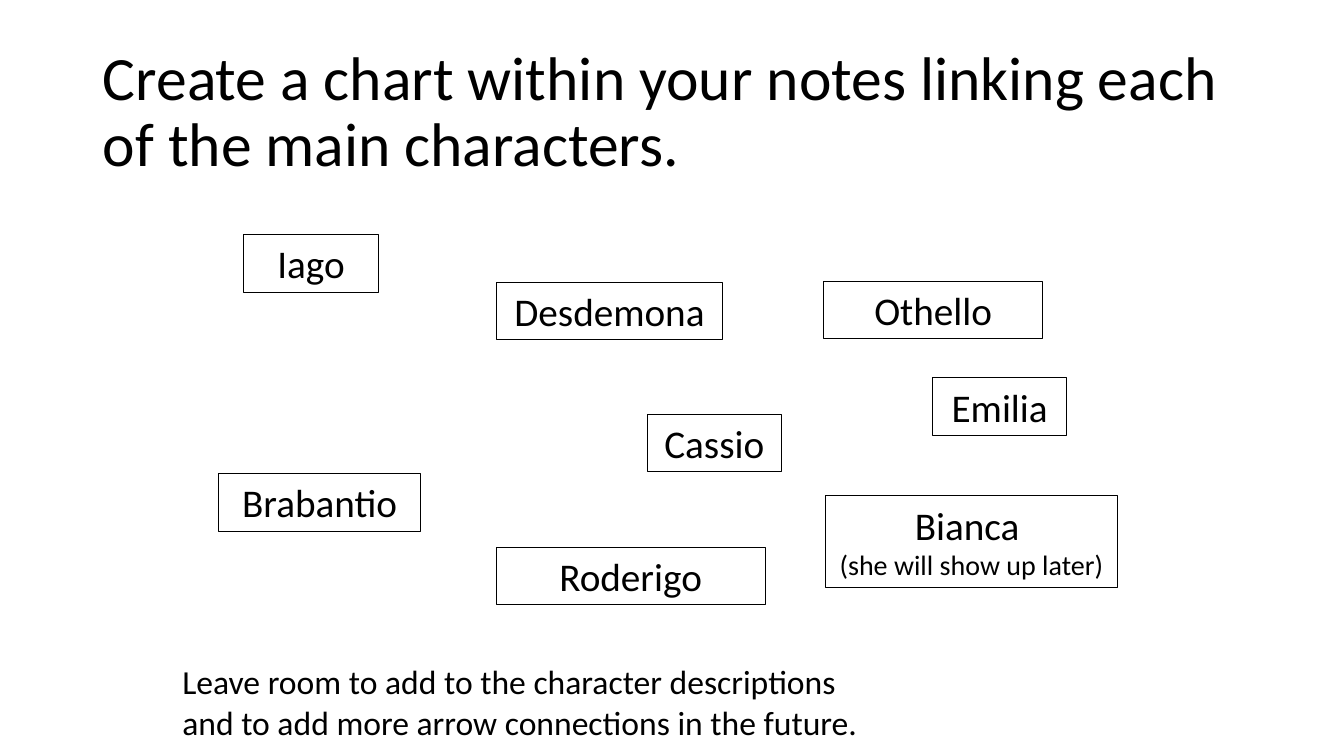
from dataclasses import dataclass

from pptx import Presentation
from pptx.dml.color import RGBColor
from pptx.enum.shapes import MSO_SHAPE
from pptx.enum.text import MSO_ANCHOR, MSO_AUTO_SIZE, PP_ALIGN
from pptx.util import Emu, Pt

RECT = MSO_SHAPE.RECTANGLE
TOP, MIDDLE = MSO_ANCHOR.TOP, MSO_ANCHOR.MIDDLE
LEFT, CENTER = PP_ALIGN.LEFT, PP_ALIGN.CENTER
NO_FIT, GROW = MSO_AUTO_SIZE.NONE, MSO_AUTO_SIZE.SHAPE_TO_FIT_TEXT

EMU_PER_PX = 9144  # 100 px to the inch
FONT = "Calibri"
BLACK = "000000"
TITLE_SIZE, NAME_SIZE, NOTE_SIZE, REMARK_SIZE = 44, 28, 24, 20
NAME_HEIGHT, REMARK_HEIGHT = 57, 91
TITLE_LAYOUT = 5


@dataclass
class Character:
    name: str
    x: int
    y: int
    w: int
    remark: str = ""


CHARACTERS = [
    Character("Iago", 242, 233, 133),
    Character("Cassio", 642, 411, 133),
    Character("Brabantio", 217, 470, 200),
    Character("Desdemona", 492, 280, 225),
    Character("Roderigo", 492, 543, 267),
    Character("Othello", 817, 279, 217),
    Character("Emilia", 925, 375, 133),
    Character("Bianca ", 819, 492, 289, "(she will show up later)"),
]
NOTE_LINES = [
    "Leave room to add to the character descriptions",
    "and to add more arrow connections in the future.",
]


def px(n: int) -> Emu:
    return Emu(n * EMU_PER_PX)


def color(hex_code: str) -> RGBColor:
    return RGBColor.from_string(hex_code)


def write(tf, lines: list[tuple[str, int]], align) -> None:
    """Write one paragraph for each (text, size) pair."""
    for i, (text, size) in enumerate(lines):
        p = tf.add_paragraph() if i else tf.paragraphs[0]
        p.alignment = align
        r = p.add_run()
        r.text = text
        r.font.name = FONT
        r.font.size = Pt(size)
        r.font.color.rgb = color(BLACK)


def add_title(s, text: str) -> None:
    sp = s.shapes.title
    sp.left, sp.top, sp.width, sp.height = px(92), px(40), px(1150), px(145)
    tf = sp.text_frame
    tf.auto_size = NO_FIT
    tf.vertical_anchor = MIDDLE
    write(tf, [(text, TITLE_SIZE)], LEFT)
    tf.paragraphs[0].line_spacing = 0.9


def add_character(s, c: Character) -> None:
    height = REMARK_HEIGHT if c.remark else NAME_HEIGHT
    sp = s.shapes.add_shape(RECT, px(c.x), px(c.y), px(c.w), px(height))
    sp.shadow.inherit = False
    sp.fill.background()
    sp.line.color.rgb = color(BLACK)
    sp.line.width = Pt(0.75)
    tf = sp.text_frame
    tf.word_wrap = True
    tf.auto_size = GROW
    tf.vertical_anchor = TOP
    lines = [(c.name, NAME_SIZE)]
    if c.remark:
        lines.append((c.remark, REMARK_SIZE))
    write(tf, lines, CENTER)


def add_note(s, lines: list[str]) -> None:
    sp = s.shapes.add_textbox(px(171), px(651), px(696), px(91))
    tf = sp.text_frame
    tf.word_wrap = False
    tf.auto_size = GROW
    write(tf, [(line, NOTE_SIZE) for line in lines], LEFT)


def main() -> None:
    prs = Presentation()
    prs.slide_width, prs.slide_height = px(1333), px(750)
    s = prs.slides.add_slide(prs.slide_layouts[TITLE_LAYOUT])

    # Heading
    add_title(s, "Create a chart within your notes linking each of the main characters.")

    # Character boxes
    for c in CHARACTERS:
        add_character(s, c)

    # Closing instruction
    add_note(s, NOTE_LINES)

    prs.save("out.pptx")


if __name__ == "__main__":
    main()
